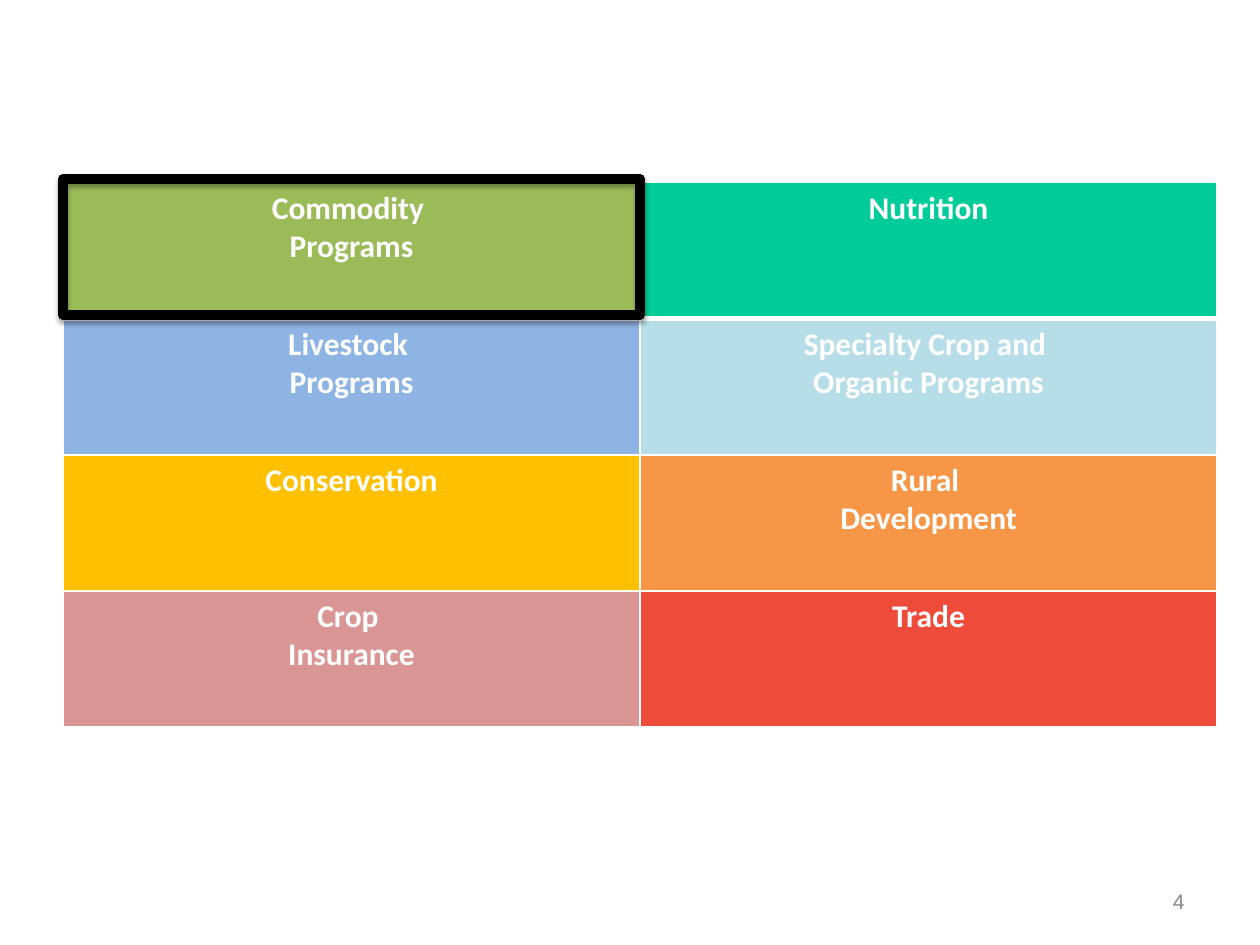
import pptx
import pptx.util
import pptx.dml.color
import pptx.enum.shapes
import pptx.enum.text
import pptx.oxml
import pptx.oxml.ns

Inches = pptx.util.Inches
Pt = pptx.util.Pt
RGBColor = pptx.dml.color.RGBColor
PP_ALIGN = pptx.enum.text.PP_ALIGN

WHITE = RGBColor(0xFF, 0xFF, 0xFF)
BLACK = RGBColor(0, 0, 0)
GRAY = RGBColor(0x89, 0x89, 0x89)
GREEN = RGBColor(0x9B, 0xBB, 0x59)
TEAL = RGBColor(0x00, 0xCC, 0x99)
BLUE = RGBColor(0x8E, 0xB4, 0xE3)
PALE_BLUE = RGBColor(0xB7, 0xDE, 0xE8)
GOLD = RGBColor(0xFF, 0xC0, 0x00)
ORANGE = RGBColor(0xF7, 0x96, 0x46)
PINK = RGBColor(0xD9, 0x96, 0x94)
RED = RGBColor(0xEE, 0x4B, 0x3A)

PROGRAMS = [
    [(["Commodity ", "Programs"], GREEN), (["Nutrition"], TEAL)],
    [(["Livestock ", "Programs"], BLUE),
     (["Specialty Crop and ", "Organic Programs"], PALE_BLUE)],
    [(["Conservation"], GOLD), (["Rural ", "Development"], ORANGE)],
    [(["Crop ", "Insurance"], PINK), (["Trade"], RED)],
]
PAGE_NUMBER = "4"
LEFT, TOP = 0.5, 1.45
COLUMN_WIDTH, ROW_HEIGHT = 4.58, 1.08
HIGHLIGHT_TOP = 1.42


def add_run(paragraph, text, size, font, color, bold=False):
    run = paragraph.add_run()
    run.text = text
    run.font.size = Pt(size)
    run.font.name = font
    run.font.bold = bold
    run.font.color.rgb = color


def set_borders(cell, bottom_width):
    properties = cell._tc.get_or_add_tcPr()
    widths = [("lnL", 1), ("lnR", 1), ("lnT", 1), ("lnB", bottom_width)]
    for position, (side, width) in enumerate(widths):
        properties.insert(position, pptx.oxml.parse_xml(
            f'<a:{side} {pptx.oxml.ns.nsdecls("a")} w="{Pt(width)}">'
            f'<a:solidFill><a:srgbClr val="{WHITE}"/></a:solidFill></a:{side}>'))


def add_programs(slide):
    rows, columns = len(PROGRAMS), len(PROGRAMS[0])
    table = slide.shapes.add_table(
        rows, columns, Inches(LEFT), Inches(TOP),
        Inches(columns * COLUMN_WIDTH), Inches(rows * ROW_HEIGHT)).table
    for row, programs in enumerate(PROGRAMS):
        for column, (lines, color) in enumerate(programs):
            cell = table.cell(row, column)
            cell.fill.solid()
            cell.fill.fore_color.rgb = color
            set_borders(cell, 3 if row == 0 else 1)
            frame = cell.text_frame
            for index, line in enumerate(lines):
                paragraph = frame.add_paragraph() if index else frame.paragraphs[0]
                paragraph.alignment = PP_ALIGN.CENTER
                add_run(paragraph, line, 18, "Calibri", WHITE, True)


def add_highlight(slide):
    highlight = slide.shapes.add_shape(
        pptx.enum.shapes.MSO_SHAPE.RECTANGLE, Inches(LEFT), Inches(HIGHLIGHT_TOP),
        Inches(COLUMN_WIDTH), Inches(ROW_HEIGHT))
    highlight.fill.background()
    highlight.line.color.rgb = BLACK
    highlight.line.width = Pt(5.75)
    highlight.line._ln.append(pptx.oxml.parse_xml(
        f'<a:round {pptx.oxml.ns.nsdecls("a")}/>'))
    highlight.shadow.inherit = False
    effects = highlight._element.spPr.find(pptx.oxml.ns.qn("a:effectLst"))
    effects.append(pptx.oxml.parse_xml(
        f'<a:outerShdw {pptx.oxml.ns.nsdecls("a")} blurRad="{Pt(3.1)}" '
        f'dist="{Pt(1.8)}" dir="5400000" rotWithShape="0">'
        f'<a:srgbClr val="{BLACK}"><a:alpha val="35000"/></a:srgbClr></a:outerShdw>'))


def add_page_number(slide):
    frame = slide.shapes.add_textbox(
        Inches(7.17), Inches(6.95), Inches(2.33), Inches(0.4)).text_frame
    frame.word_wrap = True
    frame.vertical_anchor = pptx.enum.text.MSO_ANCHOR.MIDDLE
    paragraph = frame.paragraphs[0]
    paragraph.alignment = PP_ALIGN.RIGHT
    add_run(paragraph, PAGE_NUMBER, 12, "Arial", GRAY)


def main():
    deck = pptx.Presentation()
    deck.slide_width, deck.slide_height = Inches(10), Inches(7.5)
    slide = deck.slides.add_slide(deck.slide_layouts[6])
    add_page_number(slide)
    add_programs(slide)
    add_highlight(slide)
    deck.save("out.pptx")


if __name__ == "__main__":
    main()
